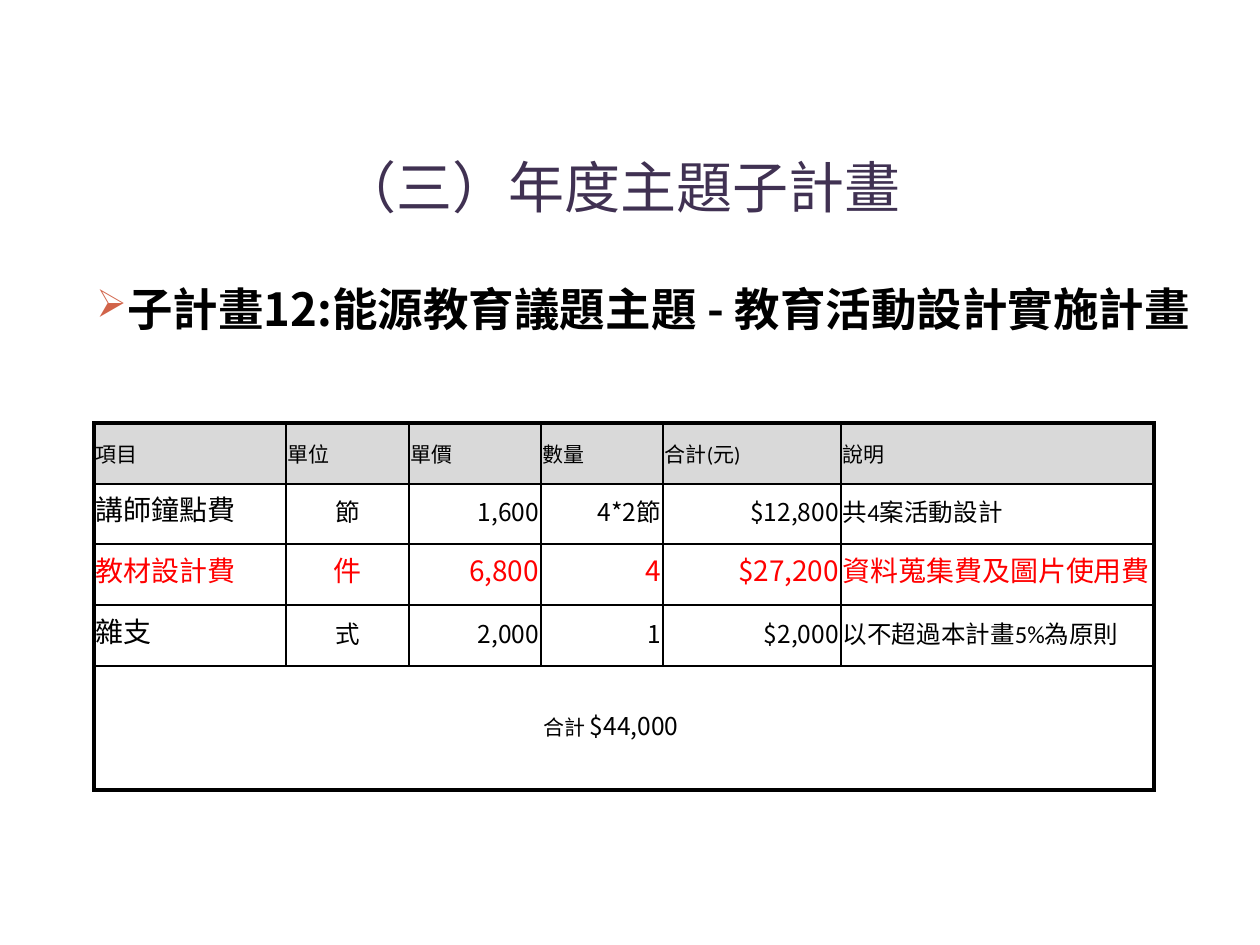
"""Build the budget slide of sub-plan 12 with its cost table."""
from lxml import etree
from pptx import Presentation, util as u
from pptx.dml.color import RGBColor
from pptx.enum import text as t
from pptx.oxml.ns import qn

COLORS = {"ink": "000000", "title": "403152", "bullet": "D16349",
          "header": "D9D9D9", "red": "FF0000"}
LATIN, JP, SC = "Calibri", "Noto Sans CJK JP", "Noto Sans CJK SC"
ALIGN = {"l": t.PP_ALIGN.LEFT, "c": t.PP_ALIGN.CENTER,
         "r": t.PP_ALIGN.RIGHT, "j": t.PP_ALIGN.JUSTIFY}

TITLE = "（三）年度主題子計畫"
HEADING = "子計畫12:能源教育議題主題 - 教育活動設計實施計畫"
HEADERS = ["項目", "單位", "單價", "數量", "合計(元)", "說明"]
ITEMS = [
    ("講師鐘點費", "節", "1,600", ("4*2", "節"), ("$", "12,800"), "共4案活動設計"),
    ("教材設計費", "件", "6,800", "4", ("$", "27,200"), "資料蒐集費及圖片使用費"),
    ("雜支", "式", "2,000", "1", ("$", "2,000"), "以不超過本計畫5%為原則"),
]
HIGHLIGHT = 1
TOTAL = [("合計 ", 12, LATIN), ("$44,000", 14, JP)]
ITEM_ALIGN = "jcrrrl"
ITEM_FONTS = [(LATIN,), (LATIN,), (SC,), (SC, LATIN), (JP, SC), (LATIN,)]

TITLE_BOX = (54, 125, 1133, 122)
HEADING_BOX = (84, 275, 1151, 635)
TABLE_AT = (94, 423)
COLUMNS = [192, 123, 132, 122, 178, 313]
ROWS = [61, 60, 61, 61, 124]
TOTAL_RIGHT_INSET = 28
THIN, THICK = 1, 2.25


def px(value):
    return u.Emu(round(value * 914400 / 126))


def rgb(name):
    return RGBColor.from_string(COLORS[name])


def assign(target, values):
    for name, value in values.items():
        setattr(target, name, value)


def add_span(para, words, size, font, color="ink", bold=False):
    span = para.add_run()
    span.text = words
    assign(span.font, {"size": u.Pt(size), "name": font, "bold": bold})
    span.font.color.rgb = rgb(color)
    east = etree.SubElement(span.font._element, qn("a:ea"))
    east.set("typeface", JP if font == LATIN else font)


def add_box(page, place, anchor):
    frame = page.shapes.add_textbox(*map(px, place)).text_frame
    assign(frame, {"word_wrap": True, "vertical_anchor": anchor})
    return frame.paragraphs[0]


def add_bullet(para, mark, color, percent):
    props = para._p.get_or_add_pPr()
    assign_xml = {"marL": "0", "indent": "0"}
    for name, value in assign_xml.items():
        props.set(name, value)
    tint = etree.SubElement(props, qn("a:buClr"))
    etree.SubElement(tint, qn("a:srgbClr")).set("val", COLORS[color])
    etree.SubElement(props, qn("a:buSzPct")).set("val", str(percent * 1000))
    etree.SubElement(props, qn("a:buChar")).set("char", mark)


def add_borders(cell, widths):
    props = cell._tc.get_or_add_tcPr()
    for side, width in widths.items():
        line = etree.SubElement(props, qn(f"a:ln{side}"), w=str(u.Pt(width)))
        fill = etree.SubElement(line, qn("a:solidFill"))
        etree.SubElement(fill, qn("a:srgbClr")).set("val", COLORS["ink"])


def format_cell(cell, row, column):
    last_row, last_column = len(ROWS) - 1, len(COLUMNS) - 1
    is_total = row == last_row
    edges = {"L": column == 0 or is_total, "R": column == last_column or is_total,
             "T": row == 0, "B": is_total}
    add_borders(cell, {side: THICK if outer else THIN for side, outer in edges.items()})
    if row == 0:
        cell.fill.solid()
        cell.fill.fore_color.rgb = rgb("header")
    else:
        cell.fill.background()
    assign(cell, {"margin_left": px(2), "margin_right": px(2), "margin_top": 0,
                  "margin_bottom": 0, "vertical_anchor": t.MSO_ANCHOR.MIDDLE})


def cell_para(cell, align):
    para = cell.text_frame.paragraphs[0]
    assign(para, {"alignment": ALIGN[align], "line_spacing": u.Pt(17)})
    return para


def add_cost_table(page):
    size = (sum(COLUMNS), sum(ROWS))
    frame = page.shapes.add_table(len(ROWS), len(COLUMNS), *map(px, TABLE_AT + size))
    table = frame.table
    assign(table, {"first_row": False, "horz_banding": False})
    for column, width in zip(table.columns, COLUMNS):
        column.width = px(width)
    for row, height in zip(table.rows, ROWS):
        row.height = px(height)
    for row in range(len(ROWS)):
        for column in range(len(COLUMNS)):
            format_cell(table.cell(row, column), row, column)

    for column, words in enumerate(HEADERS):
        add_span(cell_para(table.cell(0, column), "j"), words, 12, LATIN)
    for index, item in enumerate(ITEMS):
        marked = index == HIGHLIGHT
        for column, words in enumerate(item):
            para = cell_para(table.cell(index + 1, column), ITEM_ALIGN[column])
            parts = (words,) if isinstance(words, str) else words
            points = 16 if marked or column == 0 else 14
            for part, font in zip(parts, ITEM_FONTS[column]):
                add_span(para, part, points, font, "red" if marked else "ink")

    total = table.cell(len(ROWS) - 1, 0)
    total.merge(table.cell(len(ROWS) - 1, len(COLUMNS) - 1))
    total.margin_right = px(TOTAL_RIGHT_INSET)
    para = cell_para(total, "c")
    for words, points, font in TOTAL:
        add_span(para, words, points, font)


def main():
    deck = Presentation()
    assign(deck, {"slide_width": u.Inches(10), "slide_height": u.Inches(7.5)})
    page = deck.slides.add_slide(deck.slide_layouts[6])

    title = add_box(page, TITLE_BOX, t.MSO_ANCHOR.MIDDLE)
    title.alignment = ALIGN["c"]
    add_span(title, TITLE, 32, JP, "title")

    heading = add_box(page, HEADING_BOX, t.MSO_ANCHOR.TOP)
    add_bullet(heading, "➢", "bullet", 85)
    add_span(heading, HEADING, 26, SC, bold=True)

    add_cost_table(page)
    deck.save("out.pptx")


if __name__ == "__main__":
    main()
